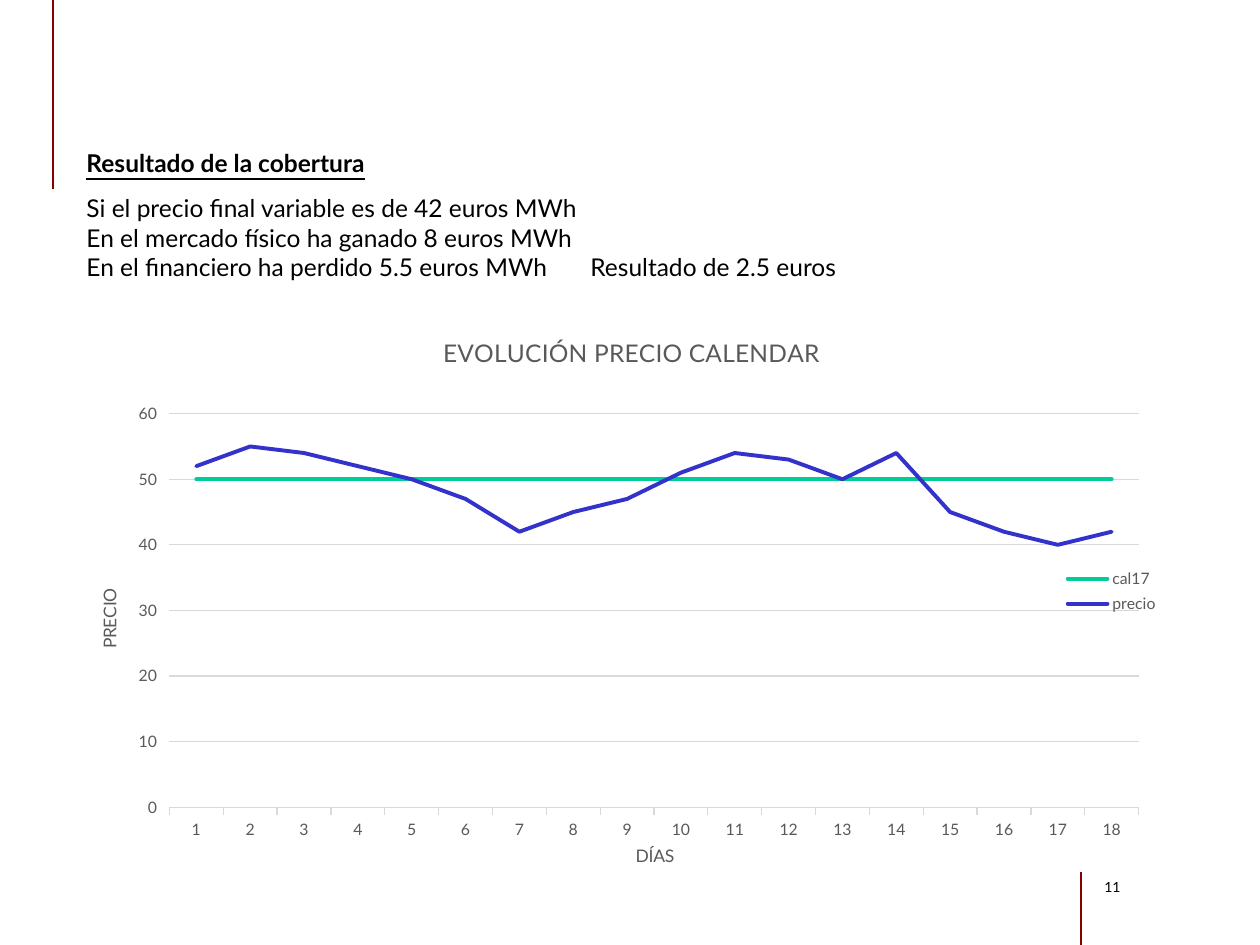
"""Build the hedge result slide with its calendar price chart."""
from lxml import etree
from pptx import Presentation
from pptx.chart.data import CategoryChartData
from pptx.dml.color import RGBColor
from pptx.enum.chart import XL_CHART_TYPE as ChartType, XL_LEGEND_POSITION as LegendPos
from pptx.enum.chart import XL_MARKER_STYLE as Marker, XL_TICK_MARK as Tick
from pptx.enum.shapes import MSO_CONNECTOR as Connector
from pptx.enum.text import MSO_AUTO_SIZE as AutoSize
from pptx.oxml.ns import qn
from pptx.util import Pt

PX = 914400 // 126
FONT = "Lato"
BLACK = RGBColor(0x00, 0x00, 0x00)
GRAY = RGBColor(0x59, 0x59, 0x59)
GRID = RGBColor(0xD9, 0xD9, 0xD9)
MAROON = RGBColor(0x87, 0x00, 0x00)
GREEN = RGBColor(0x00, 0xCC, 0x99)
BLUE = RGBColor(0x33, 0x33, 0xCC)

HEADING = ["Resultado de la cobertura"]
RESULTS = [
    "Si el precio final variable es de 42 euros MWh",
    "En el mercado físico ha ganado 8 euros MWh",
    "En el financiero ha perdido 5.5 euros MWh\tResultado de 2.5 euros",
]
PAGE_NUMBER = ["11"]
RULES = [(1081, 872, 1081, 945), (53, 0, 53, 189)]
CHART_BOX = (94, 314, 1077, 558)
CHART_TITLE = "EVOLUCIÓN PRECIO CALENDAR"
DAYS = range(1, 19)
SERIES = [
    ("cal17", [50] * len(DAYS), GREEN),
    ("precio", [52, 55, 54, 52, 50, 47, 42, 45, 47, 51, 54, 53, 50, 54, 45, 42, 40, 42], BLUE),
]


def emu(lengths):
    return [length * PX for length in lengths]


def style_font(font, size, color, bold=False, underline=False):
    font.name, font.size, font.bold, font.underline = FONT, Pt(size), bold, underline
    font.color.rgb = color


def add_text(slide, box, lines, size=14, wrap=True, grow=True, **style):
    frame = slide.shapes.add_textbox(*emu(box)).text_frame
    frame.word_wrap = wrap
    frame.auto_size = AutoSize.SHAPE_TO_FIT_TEXT if grow else AutoSize.NONE
    for index, line in enumerate(lines):
        paragraph = frame.paragraphs[0] if index == 0 else frame.add_paragraph()
        run = paragraph.add_run()
        run.text = line
        style_font(run.font, size, BLACK, **style)


def add_rule(slide, ends):
    rule = slide.shapes.add_connector(Connector.STRAIGHT, *emu(ends))
    rule.line.color.rgb = MAROON
    rule.line.width = Pt(0.75)
    etree.SubElement(rule._element.spPr, qn("a:effectLst"))


def place(part, left, top, width=None, height=None, inner=False):
    """Set a manual layout in fractions of the chart."""
    for old in part.findall(qn("c:layout")):
        part.remove(old)
    layout = etree.Element(qn("c:layout"))
    manual = etree.SubElement(layout, qn("c:manualLayout"))
    settings = [("layoutTarget", "inner" if inner else None), ("xMode", "edge"), ("yMode", "edge"),
                ("x", left), ("y", top), ("w", width), ("h", height)]
    for tag, value in settings:
        if value is not None:
            etree.SubElement(manual, qn(f"c:{tag}")).set("val", str(value))
    overlay = part.find(qn("c:overlay"))
    if overlay is None:
        part.insert(0, layout)
    else:
        overlay.addprevious(layout)


def add_title(owner, text, size, left, top):
    title = owner.chart_title if hasattr(owner, "chart_title") else owner.axis_title
    run = title.text_frame.paragraphs[0].add_run()
    run.text = text
    style_font(run.font, size, GRAY)
    place(title._element, left, top)


def add_price_chart(slide):
    data = CategoryChartData()
    data.categories = [str(day) for day in DAYS]
    for name, values, _ in SERIES:
        data.add_series(name, values)
    chart = slide.shapes.add_chart(ChartType.LINE, *emu(CHART_BOX), data).chart
    style_font(chart.font, 10, BLACK)
    plot = chart.plots[0]
    plot.vary_by_categories = False
    for line, (_, _, color) in zip(plot.series, SERIES):
        line.smooth = False
        line.marker.style = Marker.NONE
        line.format.line.color.rgb = color
        line.format.line.width = Pt(2.25)
        line._element.spPr.find(qn("a:ln")).set("cap", "rnd")

    days, price = chart.category_axis, chart.value_axis
    for axis in (days, price):
        axis.major_tick_mark = Tick.OUTSIDE
        axis.minor_tick_mark = Tick.NONE
        style_font(axis.tick_labels.font, 9, GRAY)
    price.minimum_scale, price.maximum_scale, price.major_unit = 0, 60, 10
    price.format.line.fill.background()
    for line in (days.format.line, price.major_gridlines.format.line):
        line.color.rgb = GRID
        line.width = Pt(0.75)

    add_title(chart, CHART_TITLE, 14, 0.32, 0.03)
    add_title(days, "DÍAS", 10, 0.5, 0.95)
    add_title(price, "PRECIO", 10, 0, 0.49)
    chart.has_legend = True
    chart.legend.position = LegendPos.RIGHT
    chart.legend.include_in_layout = False
    style_font(chart.legend.font, 9, GRAY)
    place(chart.legend._element, 0.9, 0.45, 0.09, 0.1)
    place(plot._element.getparent(), 0.07, 0.18, 0.9, 0.71, inner=True)


def main():
    deck = Presentation()
    deck.slide_width, deck.slide_height = emu((1260, 945))
    slide = deck.slides.add_slide(deck.slide_layouts[6])
    for ends in RULES:
        add_rule(slide, ends)
    add_text(slide, (1092, 872, 81, 63), PAGE_NUMBER, size=8, grow=False)
    add_text(slide, (74, 187, 853, 102), RESULTS)
    add_text(slide, (74, 142, 347, 43), HEADING, wrap=False, bold=True, underline=True)
    add_price_chart(slide)
    deck.save("out.pptx")


if __name__ == "__main__":
    main()
